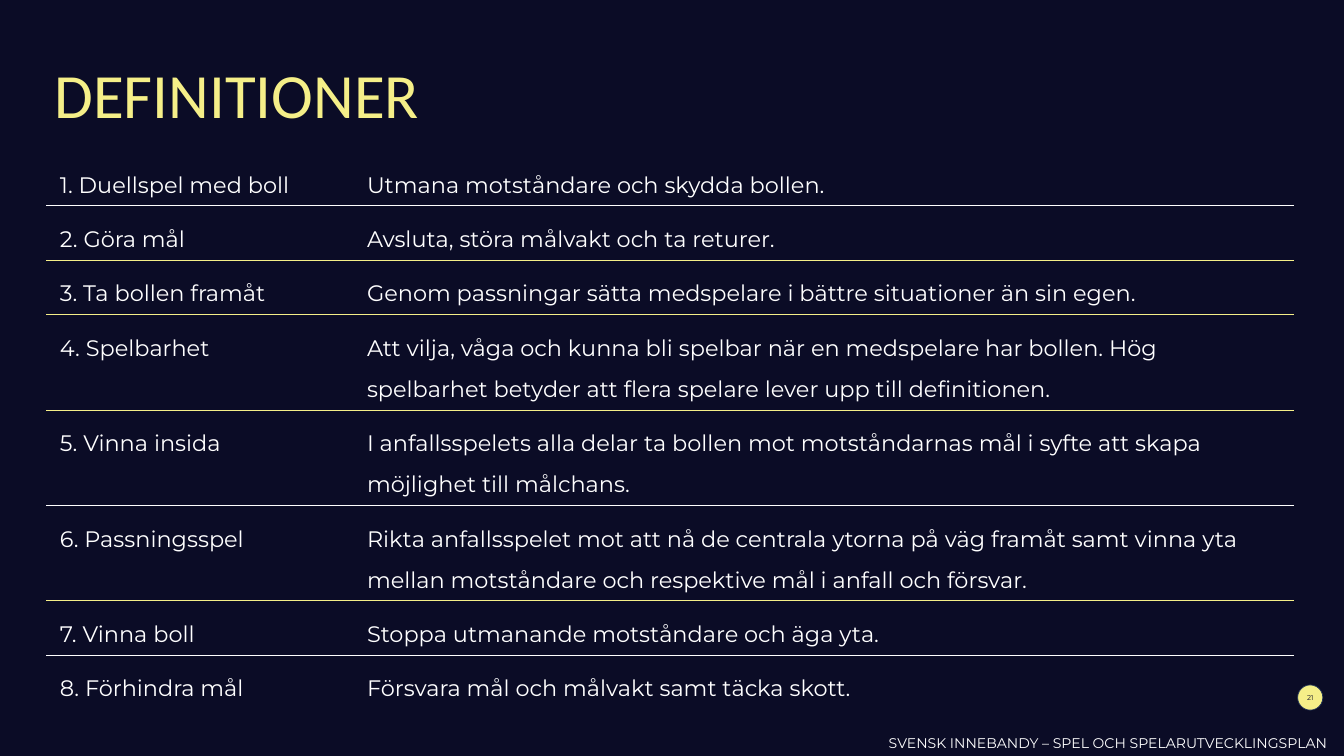
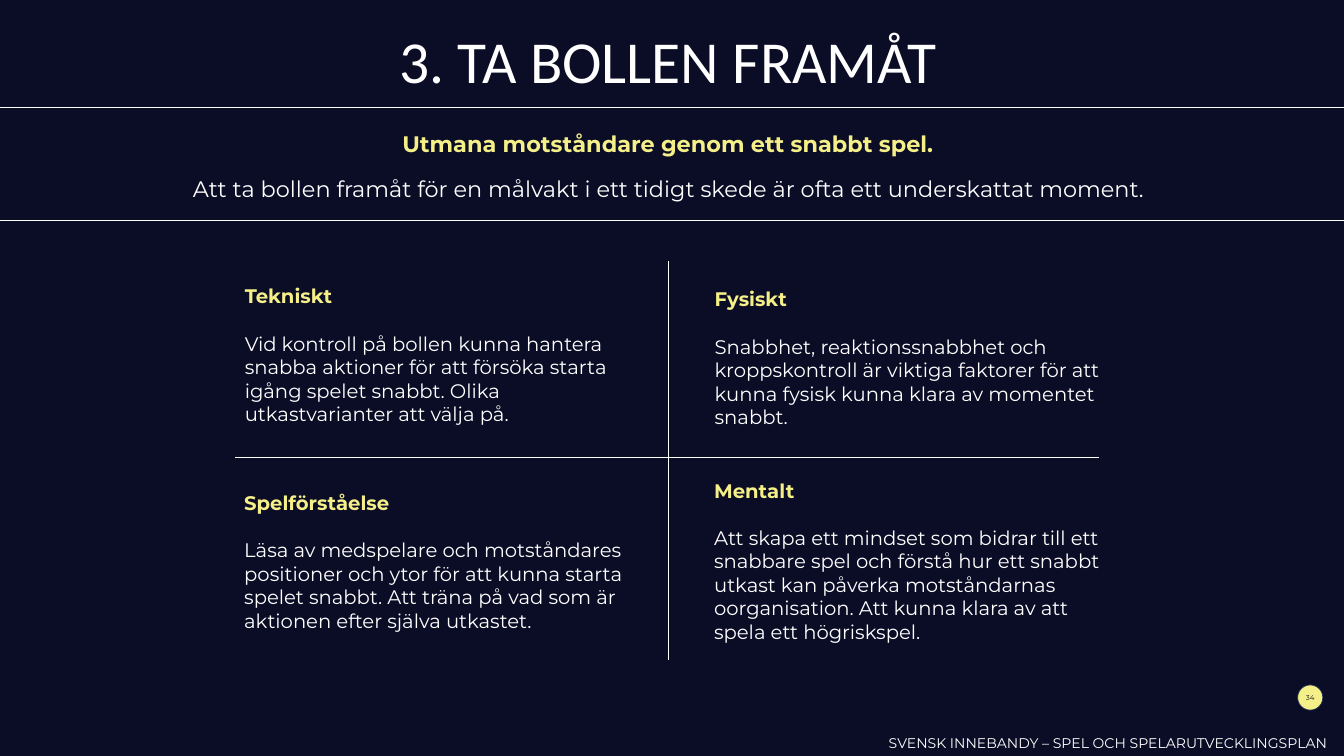
from dataclasses import dataclass
from typing import NamedTuple, Optional

from lxml.etree import SubElement
from pptx import Presentation
from pptx.dml.color import RGBColor as RGB
from pptx.enum.shapes import MSO_CONNECTOR as CONN, MSO_SHAPE as SHAPE
from pptx.enum.text import MSO_ANCHOR as ANCHOR, MSO_AUTO_SIZE as AUTO, PP_ALIGN as ALIGN
from pptx.oxml.ns import qn
from pptx.util import Pt


@dataclass(frozen=True)
class Theme:
    night: str = "0B0C26"
    yellow: str = "F5EF88"
    white: str = "FFFFFF"
    rim: str = "1E3256"
    head_font: str = "Calibri"
    body_font: str = "Montserrat"
    title: int = 90
    topic: int = 85
    body: int = 32
    aspect: int = 28
    footer: int = 20
    page: int = 10


class Box(NamedTuple):
    left: float
    top: float
    width: float
    height: float

    def pts(self) -> list:
        return [Pt(v) for v in self]


class Definition(NamedTuple):
    term: str
    meaning: str
    lines: int = 1
    rule: Optional[str] = None


class Aspect(NamedTuple):
    box: Box
    heading: str
    text: str


class Rule(NamedTuple):
    x1: float
    y1: float
    x2: float
    y2: float
    weight: float = 0.5


T = Theme()
WIDTH, HEIGHT = 1919.52, 1080
TITLE_ONLY = 5
FOOTER = "SVENSK INNEBANDY – SPEL OCH SPELARUTVECKLINGSPLAN"

TABLE_LEFT, TABLE_TOP = 66.24, 216
COLUMNS = (438.5, 1343.5)
ROW_HEIGHT, EXTRA_LINE = 77.76, 58.5
CELL_X, CELL_Y = 19.44, 9.36

DEFINITIONS = [
    Definition("1. Duellspel med boll", "Utmana motståndare och skydda bollen.", rule=T.white),
    Definition("2. Göra mål", "Avsluta, störa målvakt och ta returer.", rule=T.yellow),
    Definition("3. Ta bollen framåt",
               "Genom passningar sätta medspelare i bättre situationer än sin egen.",
               rule=T.yellow),
    Definition("4. Spelbarhet",
               "Att vilja, våga och kunna bli spelbar när en medspelare har bollen. Hög "
               "spelbarhet betyder att flera spelare lever upp till definitionen.",
               2, T.yellow),
    Definition("5. Vinna insida",
               "I anfallsspelets alla delar ta bollen mot motståndarnas mål i syfte att skapa "
               "möjlighet till målchans.", 2, T.white),
    Definition("6. Passningsspel",
               "Rikta anfallsspelet mot att nå de centrala ytorna på väg framåt samt vinna yta "
               "mellan motståndare och respektive mål i anfall och försvar.", 2, T.yellow),
    Definition("7. Vinna boll", "Stoppa utmanande motståndare och äga yta.", rule=T.white),
    Definition("8. Förhindra mål", "Försvara mål och målvakt samt täcka skott."),
]

ASPECTS = [
    Aspect(Box(1000, 670.3, 613.44, 262), "Mentalt",
           "Att skapa ett mindset som bidrar till ett snabbare spel och förstå hur ett snabbt "
           "utkast kan påverka motståndarnas oorganisation. Att kunna klara av att spela ett "
           "högriskspel."),
    Aspect(Box(329, 671.8, 613.44, 260.6), "Spelförståelse",
           "Läsa av medspelare och motståndares positioner och ytor för att kunna starta spelet "
           "snabbt. Att träna på vad som är aktionen efter själva utkastet."),
    Aspect(Box(329.8, 376.6, 613.44, 260.6), "Tekniskt",
           "Vid kontroll på bollen kunna hantera snabba aktioner för att försöka starta igång "
           "spelet snabbt. Olika utkastvarianter att välja på."),
    Aspect(Box(1000.8, 380.2, 613.44, 262), "Fysiskt",
           "Snabbhet, reaktionssnabbhet och kroppskontroll är viktiga faktorer för att kunna "
           "fysisk kunna klara av momentet snabbt."),
]

RULES = [
    Rule(336.24, 653.76, 1570.32, 653.76),
    Rule(954.72, 372.96, 954.72, 943.2, 1),
    Rule(0, 153.36, WIDTH, 153.36),
    Rule(0, 313.92, WIDTH, 313.92),
]


def write(tf, text: str, *, size: float, color: str = T.white, font: str = T.body_font,
          bold: bool = False, align=ALIGN.LEFT, spacing: Optional[float] = None,
          before: float = 0, new: bool = False) -> None:
    """Fill the first paragraph, or append one when new is set."""
    p = tf.add_paragraph() if new else tf.paragraphs[0]
    p.alignment = align
    p.space_before = Pt(before)
    if spacing:
        p.line_spacing = spacing
    r = p.add_run()
    r.text = text
    r.font.size, r.font.name, r.font.bold = Pt(size), font, bold
    r.font.color.rgb = RGB.from_string(color)


def frame(sp, anchor=ANCHOR.MIDDLE):
    """Return the shape's text frame, wrapped and anchored."""
    tf = sp.text_frame
    tf.word_wrap, tf.auto_size, tf.vertical_anchor = True, AUTO.NONE, anchor
    return tf


def add_text(slide, box: Box, text: str, anchor=ANCHOR.TOP, **fmt) -> None:
    write(frame(slide.shapes.add_textbox(*box.pts()), anchor), text, **fmt)


def title_frame(slide, box: Box):
    sp = slide.shapes.title
    sp.left, sp.top, sp.width, sp.height = box.pts()
    return frame(sp)


def add_rule(slide, rule: Rule) -> None:
    ends = (Pt(v) for v in rule[:4])
    line = slide.shapes.add_connector(CONN.STRAIGHT, *ends)
    line.line.color.rgb = RGB.from_string(T.white)
    line.line.width = Pt(rule.weight)
    SubElement(line._element.spPr, qn("a:effectLst"))


def add_page_marks(slide, number: int) -> None:
    """Add the page disc, its number and the footer."""
    disc = slide.shapes.add_shape(SHAPE.OVAL, *Box(1853.28, 978.48, 36, 36).pts())
    disc.shadow.inherit = False
    disc.fill.solid()
    disc.fill.fore_color.rgb = RGB.from_string(T.yellow)
    disc.line.color.rgb = RGB.from_string(T.rim)
    disc.line.width = Pt(1)
    add_text(slide, Box(1826.28, 968.4, 90, 57.6), str(number), ANCHOR.MIDDLE,
             size=T.page, color=T.night, align=ALIGN.CENTER)
    add_text(slide, Box(1262.16, 1045.44, 657.36, 32.4), FOOTER, size=T.footer)


def set_borders(cell, top: Optional[str], bottom: Optional[str]) -> None:
    tc_pr = cell._tc.get_or_add_tcPr()
    for side, color in (("L", None), ("R", None), ("T", top), ("B", bottom)):
        ln = SubElement(tc_pr, qn(f"a:ln{side}"), w=str(Pt(0.5)))
        if color:
            fill = SubElement(ln, qn("a:solidFill"))
            SubElement(fill, qn("a:srgbClr"), val=color)
        else:
            SubElement(ln, qn("a:noFill"))


def add_definitions(slide) -> None:
    heights = [ROW_HEIGHT + EXTRA_LINE * (d.lines - 1) for d in DEFINITIONS]
    box = Box(TABLE_LEFT, TABLE_TOP, sum(COLUMNS), sum(heights))
    table = slide.shapes.add_table(len(DEFINITIONS), len(COLUMNS), *box.pts()).table
    table.first_row = table.horz_banding = False
    for column, width in zip(table.columns, COLUMNS):
        column.width = Pt(width)
    above = None
    for row, height, item in zip(table.rows, heights, DEFINITIONS):
        row.height = Pt(height)
        for cell, text in zip(row.cells, (item.term, item.meaning)):
            set_borders(cell, above, item.rule)
            cell.fill.solid()
            cell.fill.fore_color.rgb = RGB.from_string(T.night)
            cell.margin_left = cell.margin_right = Pt(CELL_X)
            cell.margin_top = cell.margin_bottom = Pt(CELL_Y)
            write(cell.text_frame, text, size=T.body, spacing=1.5)
        above = item.rule


def add_aspect(slide, aspect: Aspect) -> None:
    sp = slide.shapes.add_shape(SHAPE.ROUNDED_RECTANGLE, *aspect.box.pts())
    sp.shadow.inherit = False
    sp.fill.background()
    sp.line.fill.background()
    tf = frame(sp)
    write(tf, aspect.heading, size=T.aspect, color=T.yellow, bold=True)
    write(tf, aspect.text, size=T.aspect, before=34, new=True)


def build_definitions(prs) -> None:
    slide = prs.slides.add_slide(prs.slide_layouts[TITLE_ONLY])
    write(title_frame(slide, Box(70.56, 36, 1656, 208.8)), "DEFINITIONER",
          size=T.title, color=T.yellow, font=T.head_font, spacing=0.9)
    add_definitions(slide)
    add_page_marks(slide, 21)


def build_topic(prs) -> None:
    slide = prs.slides.add_slide(prs.slide_layouts[TITLE_ONLY])
    tf = title_frame(slide, Box(293.76, 41.76, 1320.48, 174.24))
    write(tf, "3. TA BOLLEN FRAMÅT", size=T.topic, font=T.head_font, align=ALIGN.CENTER)
    write(tf, "Utmana motståndare genom ett snabbt spel.", size=T.body, color=T.yellow,
          bold=True, align=ALIGN.CENTER, before=49, new=True)
    add_text(slide, Box(156.24, 246.96, 1597.68, 46.08),
             "Att ta bollen framåt för en målvakt i ett tidigt skede är ofta ett "
             "underskattat moment.", size=T.body, align=ALIGN.CENTER)
    for aspect in ASPECTS:
        add_aspect(slide, aspect)
    for rule in RULES:
        add_rule(slide, rule)
    add_page_marks(slide, 34)


def main() -> None:
    prs = Presentation()
    prs.slide_width, prs.slide_height = Pt(WIDTH), Pt(HEIGHT)
    backdrop = prs.slide_master.background.fill
    backdrop.solid()
    backdrop.fore_color.rgb = RGB.from_string(T.night)
    build_definitions(prs)
    build_topic(prs)
    prs.save("out.pptx")


if __name__ == "__main__":
    main()
